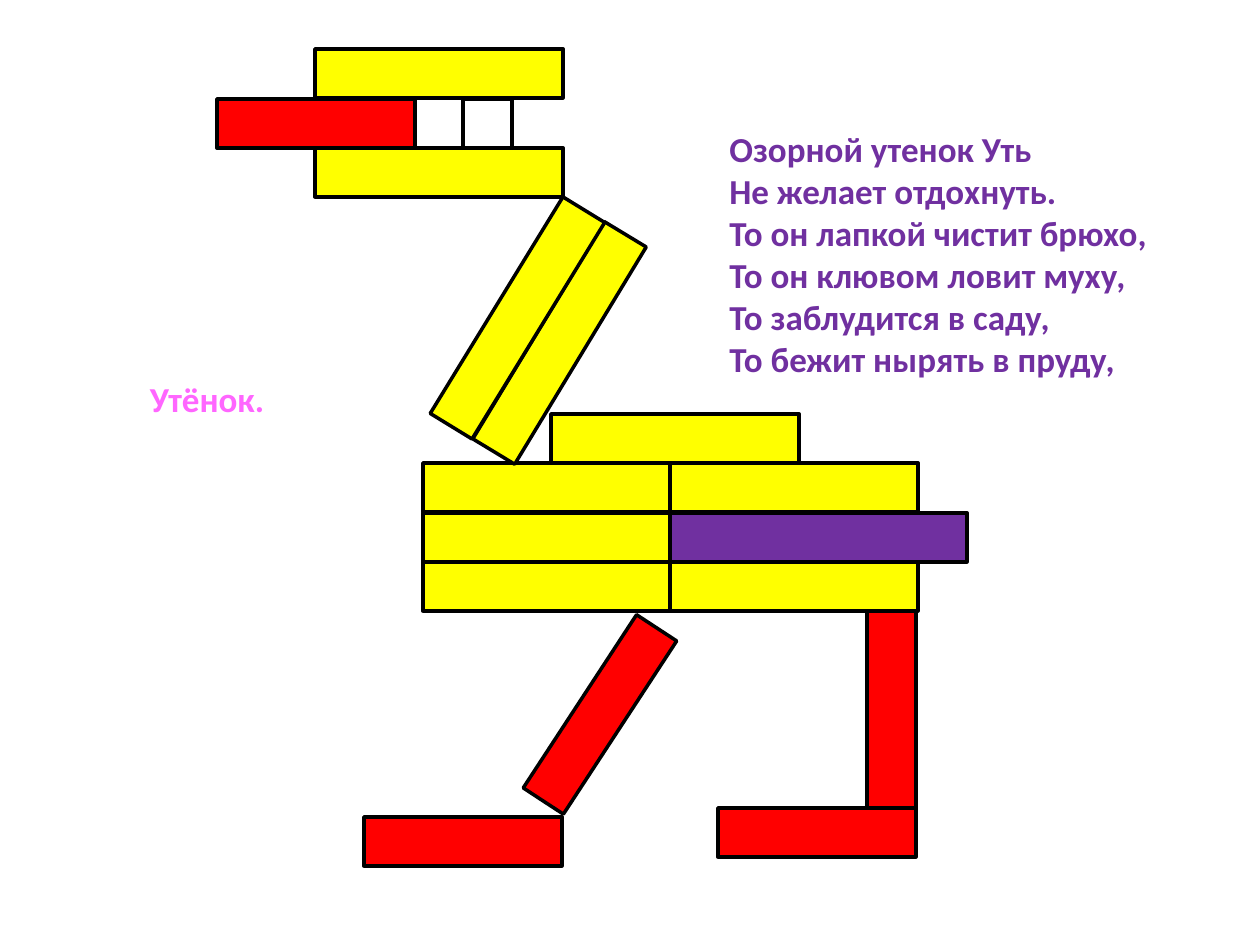
from pptx import Presentation
from pptx.dml.color import RGBColor
from pptx.enum.shapes import MSO_SHAPE
from pptx.enum.text import MSO_ANCHOR, PP_ALIGN
from pptx.util import Emu, Pt

PX = 914400 / 126
STICK = 49
RED, YELLOW, PURPLE = "FF0000", "FFFF00", "7030A0"
WHITE, BLACK, PINK = "FFFFFF", "000000", "FF66FF"


def px(value):
    return Emu(round(value * PX))


def color(value):
    return RGBColor.from_string(value)


class DuckSlide:
    font_style = {"name": "Calibri", "size": Pt(20), "bold": True}

    def __init__(self, presentation):
        self.slide = presentation.slides.add_slide(presentation.slide_layouts[5])

    def set_text(self, shape, text, text_color, alignment, anchor):
        frame = shape.text_frame
        frame.word_wrap = True
        frame.vertical_anchor = anchor
        paragraph = frame.paragraphs[0]
        paragraph.text = text
        paragraph.alignment = alignment
        for run in paragraph.runs:
            for name, value in self.font_style.items():
                setattr(run.font, name, value)
            run.font.color.rgb = color(text_color)

    def title(self, text, left, top, width, height):
        shape = self.slide.shapes.title
        box = {"left": left, "top": top, "width": width, "height": height}
        for name, value in box.items():
            setattr(shape, name, px(value))
        self.set_text(shape, text, PINK, PP_ALIGN.CENTER, MSO_ANCHOR.MIDDLE)

    def poem(self, lines, left, top, width, height):
        shape = self.slide.shapes.add_textbox(*map(px, (left, top, width, height)))
        self.set_text(shape, "\n".join(lines), PURPLE, PP_ALIGN.LEFT, MSO_ANCHOR.TOP)

    def stick(self, fill, left, top, width, height=STICK, rotation=0):
        shape = self.slide.shapes.add_shape(
            MSO_SHAPE.RECTANGLE, *map(px, (left, top, width, height)))
        shape.rotation = rotation
        shape.shadow.inherit = False
        shape.fill.solid()
        shape.fill.fore_color.rgb = color(fill)
        shape.line.color.rgb = color(BLACK)
        shape.line.width = Pt(2)


def main():
    presentation = Presentation()
    presentation.slide_width, presentation.slide_height = px(1260), px(945)
    duck = DuckSlide(presentation)

    # Texts
    duck.title("Утёнок.", 69, 325, 276, 147)
    duck.poem([
        "Озорной утенок Уть",
        "Не желает отдохнуть.",
        "То он лапкой чистит брюхо,",
        "То он клювом ловит муху,",
        "То заблудится в саду,",
        "То бежит нырять в пруду,",
    ], 717, 121, 466, 265)

    # Feet and straight leg
    duck.stick(RED, 364, 817, 198)
    duck.stick(RED, 718, 808, 198)
    duck.stick(RED, 867, 610, STICK, 198)

    # Body: three rows, with the tail in the middle one
    for top, fill, length in ((562, YELLOW, 248), (513, PURPLE, 297), (463, YELLOW, 248)):
        duck.stick(YELLOW, 423, top, 248)
        duck.stick(fill, 670, top, length)
    duck.stick(YELLOW, 551, 414, 248)

    # Neck
    duck.stick(YELLOW, 535, 216, STICK, 254, 31.2)
    duck.stick(YELLOW, 493, 191, STICK, 254, 31.5)

    # Head, beak and eye
    duck.stick(YELLOW, 315, 148, 248)
    duck.stick(RED, 217, 99, 198)
    duck.stick(YELLOW, 315, 49, 248)
    duck.stick(WHITE, 463, 99, STICK)

    # Bent leg
    duck.stick(RED, 576, 611, 48, 207, 33.2)

    presentation.save("out.pptx")


if __name__ == "__main__":
    main()
